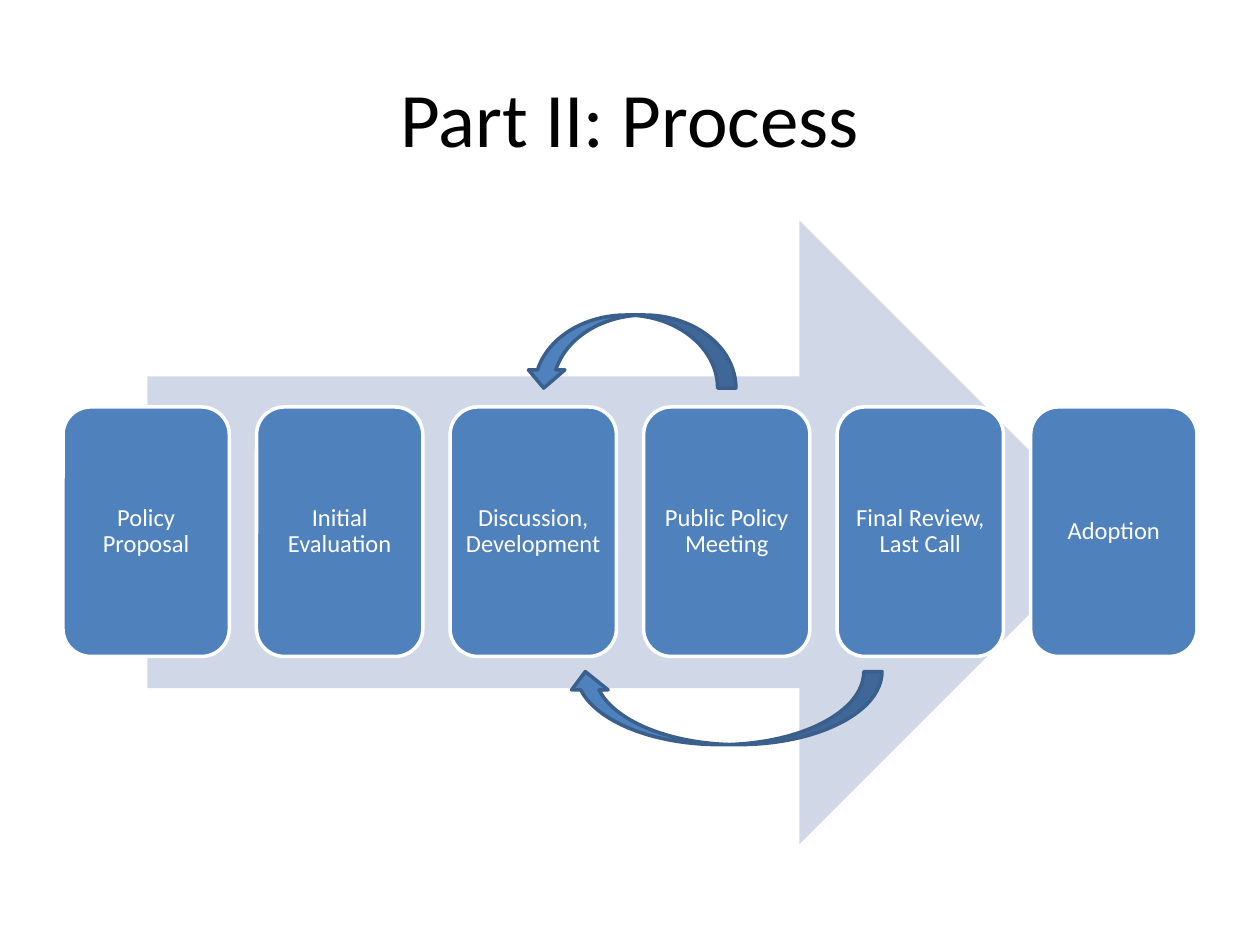
from dataclasses import dataclass

from pptx import Presentation
from pptx.dml.color import RGBColor
from pptx.enum.shapes import MSO_SHAPE as Shape
from pptx.enum.text import MSO_ANCHOR as Anchor, PP_ALIGN as Align
from pptx.util import Inches, Pt


@dataclass(frozen=True)
class Theme:
    """Colours, font and type sizes of the slide."""
    font: str = "Calibri"
    title_size: int = 44
    step_size: int = 14
    line_width: int = 2
    black: str = "000000"
    white: str = "FFFFFF"
    blue: str = "4F81BD"
    dark_blue: str = "3A5F8C"
    pale_blue: str = "D0D8E8"


THEME = Theme()
STEPS = [
    "Policy Proposal",
    "Initial Evaluation",
    "Discussion, Development",
    "Public Policy Meeting",
    "Final Review, Last Call",
    "Adoption",
]
MARGIN, CONTENT_WIDTH = 0.5, 9
STEP_TOP, STEP_WIDTH, STEP_HEIGHT = 3.23, 1.32, 1.98


def set_text(frame, text, size, color):
    """Write one centred paragraph in the theme font."""
    frame.text = text
    frame.word_wrap = True
    frame.vertical_anchor = Anchor.MIDDLE
    para = frame.paragraphs[0]
    para.alignment = Align.CENTER
    para.font.name = THEME.font
    para.font.size = Pt(size)
    para.font.color.rgb = RGBColor.from_string(color)
    return para


def add_title(page, text):
    """Place and format the title placeholder."""
    title = page.shapes.title
    title.left, title.top = Inches(MARGIN), Inches(0.3)
    title.width, title.height = Inches(CONTENT_WIDTH), Inches(1.25)
    set_text(title.text_frame, text, THEME.title_size, THEME.black)


def add_block(page, kind, bounds, fill, line=None):
    """Add a flat preset shape, outlined when a line colour is given."""
    box = page.shapes.add_shape(kind, *map(Inches, bounds))
    box.shadow.inherit = False
    box.fill.solid()
    box.fill.fore_color.rgb = RGBColor.from_string(fill)
    if line:
        box.line.color.rgb = RGBColor.from_string(line)
        box.line.width = Pt(THEME.line_width)
    else:
        box.line.fill.background()
    return box


def add_step(page, left, text):
    """Add one rounded process step with its label."""
    bounds = (left, STEP_TOP, STEP_WIDTH, STEP_HEIGHT)
    box = add_block(page, Shape.ROUNDED_RECTANGLE, bounds, THEME.blue, THEME.white)
    frame = box.text_frame
    frame.margin_left = frame.margin_right = 0
    frame.margin_top = frame.margin_bottom = 0
    para = set_text(frame, text, THEME.step_size, THEME.white)
    para.line_spacing = 0.9


def add_return_arrow(page, kind, bounds):
    """Add a curved arrow turned to point back to an earlier step."""
    arrow = add_block(page, kind, bounds, THEME.blue, THEME.dark_blue)
    arrow.rotation = 180


def main():
    """Build and save the process slide."""
    deck = Presentation()
    deck.slide_width, deck.slide_height = Inches(10), Inches(7.5)
    page = deck.slides.add_slide(deck.slide_layouts[5])
    add_title(page, "Part II: Process")
    add_block(page, Shape.RIGHT_ARROW, (1.17, 1.75, 7.65, 4.95), THEME.pale_blue)
    pitch = (CONTENT_WIDTH - STEP_WIDTH) / (len(STEPS) - 1)
    for index, text in enumerate(STEPS):
        add_step(page, MARGIN + index * pitch, text)
    add_return_arrow(page, Shape.CURVED_UP_ARROW, (4.17, 2.5, 1.67, 0.58))
    add_return_arrow(page, Shape.CURVED_DOWN_ARROW, (4.5, 5.33, 2.5, 0.58))
    deck.save("out.pptx")


if __name__ == "__main__":
    main()
